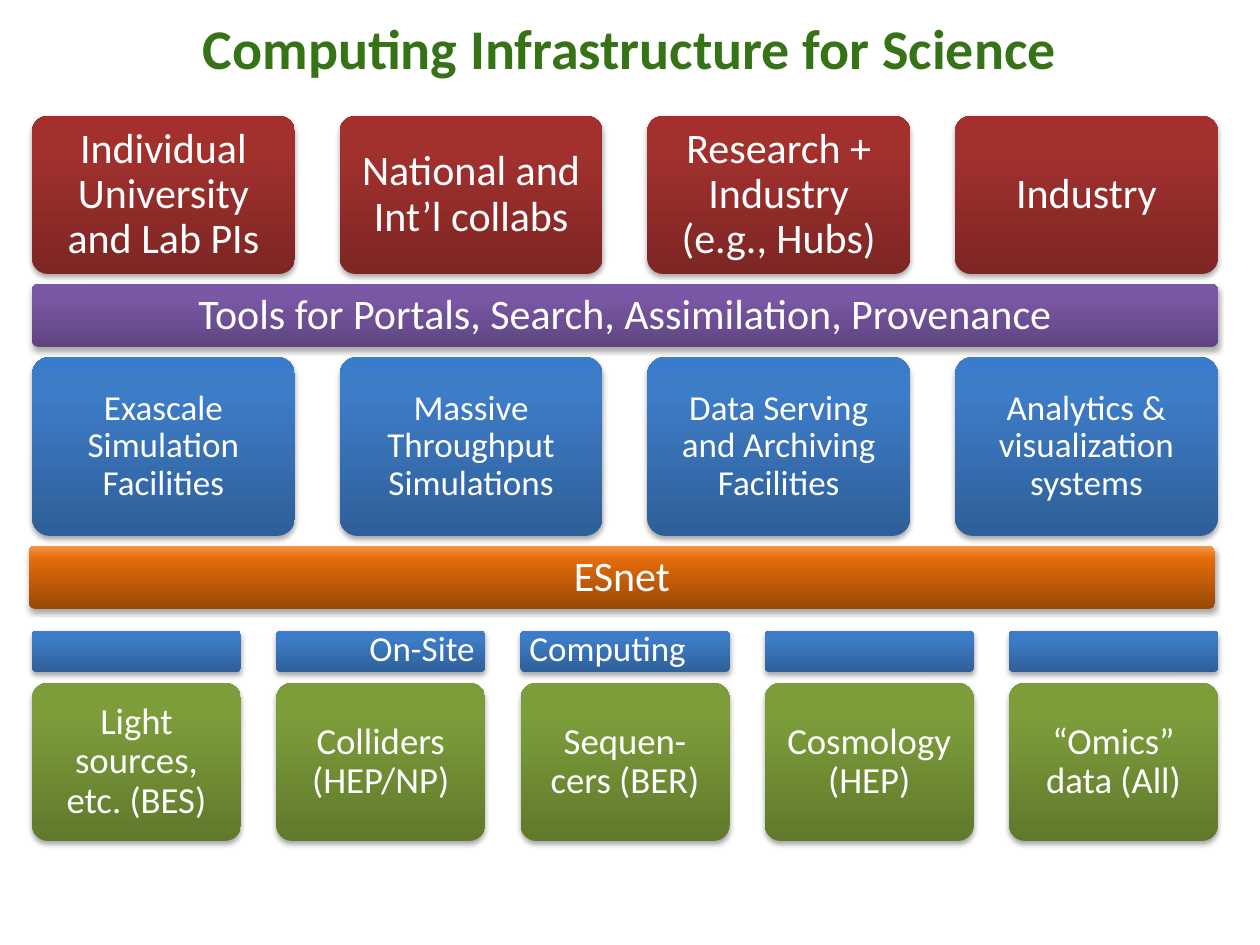
import copy
from dataclasses import dataclass

import pptx
import pptx.dml.color
import pptx.enum.shapes
import pptx.enum.text
import pptx.oxml
import pptx.oxml.ns
import pptx.util

SCALE = 914400 / 126  # EMU in one px
NS = 'xmlns:a="http://schemas.openxmlformats.org/drawingml/2006/main"'
CENTER = pptx.enum.text.PP_ALIGN.CENTER
LEFT = pptx.enum.text.PP_ALIGN.LEFT
MIDDLE = pptx.enum.text.MSO_ANCHOR.MIDDLE
TOP = pptx.enum.text.MSO_ANCHOR.TOP


@dataclass(frozen=True)
class Theme:
    font: str = "Calibri"
    title: str = "367317"
    white: str = "FFFFFF"
    # Gradients run from the bottom edge up
    red: tuple = ("7D2624", "A2312E", "A52F2C")
    purple: tuple = ("5F4480", "7B58A6", "7C57A8")
    blue: tuple = ("2F5F99", "3D7CC7", "3A7CCB")
    orange: tuple = ("984807", "E46C0A", "F79646")
    green: tuple = ("60792C", "7C9D3A", "7D9F38")
    stops: tuple = (0, 0.8, 1)
    head: int = 32
    large: int = 24
    mid: int = 21
    small: int = 20


THEME = Theme()


@dataclass(frozen=True)
class Row:
    """Equal boxes spread evenly from left over the given span."""
    top: int
    width: int
    height: int
    grad: tuple
    labels: tuple
    size: int = THEME.large
    inset: int = 17
    left: int = 32
    span: int = 1186


ROWS = (
    Row(116, 263, 158, THEME.red,
        ("Individual University and Lab PIs", "National and Int’l collabs",
         "Research + Industry (e.g., Hubs)", "Industry")),
    Row(284, 1186, 63, THEME.purple,
        ("Tools for Portals, Search, Assimilation, Provenance",), inset=14),
    Row(357, 263, 179, THEME.blue,
        ("Exascale Simulation Facilities", "Massive Throughput Simulations",
         "Data Serving and Archiving Facilities",
         "Analytics & visualization systems"), THEME.small, 15),
    Row(546, 1186, 63, THEME.orange, ("ESnet",), inset=14, left=29),
    Row(631, 209, 41, THEME.blue, ("",) * 5),
    Row(683, 209, 158, THEME.green,
        ("Light sources, etc. (BES)", "Colliders (HEP/NP)",
         "Sequen-cers (BER)", "Cosmology (HEP)", "“Omics” data (All)"),
        THEME.mid, 16),
)


def px(num: float) -> int:
    return round(num * SCALE)


def rgb(code: str) -> pptx.dml.color.RGBColor:
    return pptx.dml.color.RGBColor.from_string(code)


def write(shape, text: str, size: int, color: str, align=CENTER,
          anchor=MIDDLE, bold: bool = False):
    frame = shape.text_frame
    frame.word_wrap = True
    frame.vertical_anchor = anchor
    para = frame.paragraphs[0]
    para.text = text
    para.alignment = align
    font = para.font
    font.name, font.size, font.bold = THEME.font, pptx.util.Pt(size), bold
    font.color.rgb = rgb(color)
    return para


def shade(shape, grad: tuple) -> None:
    """Give a shape its three-stop gradient and soft shadow."""
    fill = shape.fill
    fill.gradient()
    fill.gradient_angle = 90
    props = shape._element.spPr
    stops = props.find(".//" + pptx.oxml.ns.qn("a:gsLst"))
    stops.append(copy.deepcopy(stops[-1]))
    for stop, spot, color in zip(fill.gradient_stops, THEME.stops, grad):
        stop.position = spot
        stop.color.rgb = rgb(color)
    shape.line.fill.background()
    shape.shadow.inherit = False
    props.find(pptx.oxml.ns.qn("a:effectLst")).append(pptx.oxml.parse_xml(
        f'<a:outerShdw {NS} blurRad="40000" dist="23000" dir="5400000" '
        'rotWithShape="0"><a:srgbClr val="000000"><a:alpha val="35000"/>'
        '</a:srgbClr></a:outerShdw>'))


def draw(slide, row: Row) -> None:
    step = (row.span - row.width) / max(len(row.labels) - 1, 1)
    for col, label in enumerate(row.labels):
        box = slide.shapes.add_shape(
            pptx.enum.shapes.MSO_SHAPE.ROUNDED_RECTANGLE,
            px(row.left + col * step), px(row.top),
            px(row.width), px(row.height))
        box.adjustments[0] = 0.1
        shade(box, row.grad)
        if label:
            frame = box.text_frame
            frame.margin_left = frame.margin_right = px(row.inset)
            frame.margin_top = frame.margin_bottom = px(row.inset)
            para = write(box, label, row.size, THEME.white)
            para.line_spacing = 0.9


def main() -> None:
    deck = pptx.Presentation()
    deck.slide_width, deck.slide_height = px(1260), px(945)
    slide = deck.slides.add_slide(deck.slide_layouts[6])

    # Title
    title = slide.shapes.add_textbox(0, 0, px(1260), px(95))
    write(title, "Computing Infrastructure for Science", THEME.head,
          THEME.title, bold=True)

    # Layers, from users down to data sources
    for row in ROWS:
        draw(slide, row)

    # Label across the on-site strips, split by a tab stop
    label = slide.shapes.add_textbox(px(357), px(620), px(350), px(55))
    para = label.text_frame.paragraphs[0]
    para._p.get_or_add_pPr().append(pptx.oxml.parse_xml(
        f'<a:tabLst {NS}><a:tab pos="{px(160)}" algn="l"/></a:tabLst>'))
    write(label, "On-Site\tComputing", THEME.small, THEME.white, LEFT, TOP)

    deck.save("out.pptx")


if __name__ == "__main__":
    main()
